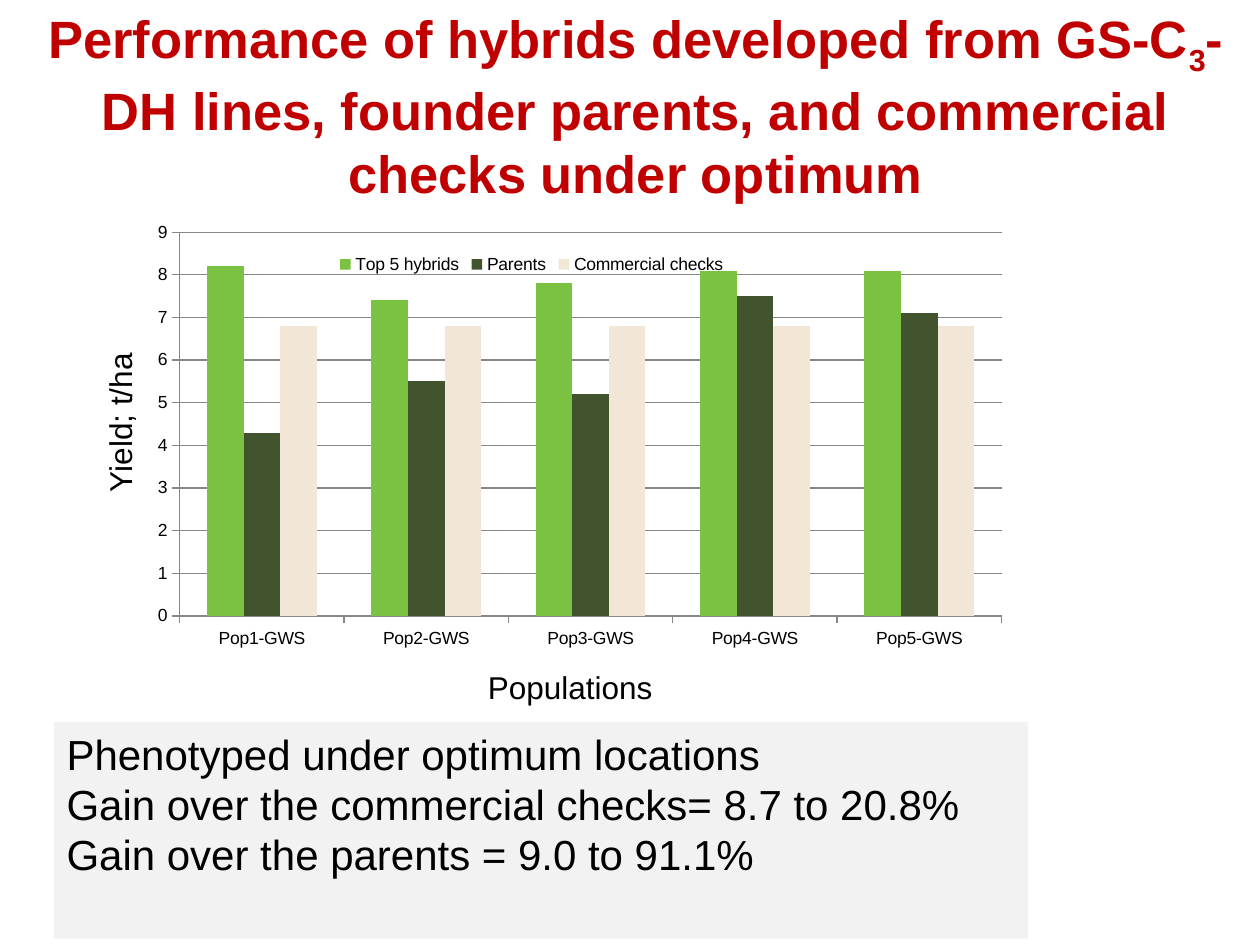
from lxml import etree
from pptx import Presentation
from pptx.chart.data import CategoryChartData
from pptx.dml.color import RGBColor
from pptx.enum.chart import XL_CHART_TYPE as ChartType, XL_LEGEND_POSITION as LegendPosition
from pptx.enum.chart import XL_TICK_MARK as TickMark
from pptx.enum.shapes import MSO_SHAPE as Shape
from pptx.enum.text import MSO_ANCHOR as Anchor, MSO_AUTO_SIZE as AutoSize, PP_ALIGN as Align
from pptx.oxml.ns import qn
from pptx.util import Inches, Pt

# Content
FONT = "Arial"
COLORS = {"title": "C00000", "text": "000000", "panel": "F2F2F2", "grid": "878787"}
TITLE = [
    ("Performance of hybrids developed from GS-C", False),
    ("3", True),
    ("-DH lines, founder parents, and commercial checks under optimum", False),
]
POPULATIONS = [f"Pop{number}-GWS" for number in range(1, 6)]
SERIES = [
    ("Top 5 hybrids", "7BC142", (8.2, 7.4, 7.8, 8.1, 8.1)),
    ("Parents", "41542E", (4.3, 5.5, 5.2, 7.5, 7.1)),
    ("Commercial checks", "F2E6D7", (6.8,) * 5),
]
FINDINGS = [
    "Phenotyped under optimum locations",
    "Gain over the commercial checks= 8.7 to 20.8%",
    "Gain over the parents = 9.0 to 91.1%",
]
# text, (left, top, width, height), rotated
AXIS_TITLES = [
    ("Yield; t/ha", (0.75, 1.78, 0.5, 3.15), True),
    ("Populations", (1.77, 5.25, 5.51, 0.4), False),
]
CHART_AREA = (1.14, 1.69, 7.16, 3.55)
PLOT_LAYOUT = (0.04, 0.043, 0.911, 0.858)
LEGEND_LAYOUT = (0.21, 0.08, 0.44, 0.07)


def rgb(name):
    return RGBColor.from_string(COLORS[name])


def inches(area):
    return [Inches(length) for length in area]


def style(font, size, color="text", bold=False):
    font.name, font.size, font.bold = FONT, Pt(size), bold
    font.color.rgb = rgb(color)


def manual_layout(parent, area, before, inner=False):
    """Place a chart part by fractions of the chart area."""
    for old in parent.findall(qn("c:layout")):
        parent.remove(old)
    layout = etree.Element(qn("c:layout"))
    manual = etree.SubElement(layout, qn("c:manualLayout"))
    settings = [("layoutTarget", "inner")] if inner else []
    settings += [("xMode", "edge"), ("yMode", "edge")]
    settings += zip("xywh", map(str, area))
    for tag, value in settings:
        etree.SubElement(manual, qn(f"c:{tag}")).set("val", value)
    parent.find(qn(before)).addprevious(layout)


deck = Presentation()
deck.slide_width, deck.slide_height = Inches(10), Inches(7.5)
slide = deck.slides.add_slide(deck.slide_layouts[5])

# Title with subscript
title = slide.shapes.title
title.left, title.top, title.width, title.height = inches((0.2, 0.21, 9.69, 1.25))
title.text_frame.auto_size = AutoSize.NONE
title.text_frame.vertical_anchor = Anchor.MIDDLE
para = title.text_frame.paragraphs[0]
para.alignment = Align.CENTER
for text, subscript in TITLE:
    span = para.add_run()
    span.text = text
    if subscript:
        span.font._element.set("baseline", "-25000")
style(para.font, 30, "title", bold=True)

# Axis titles
for text, area, rotated in AXIS_TITLES:
    box = slide.shapes.add_textbox(*inches(area))
    frame = box.text_frame
    frame.word_wrap = True
    if rotated:
        frame._txBody.bodyPr.set("vert", "vert270")
    para = frame.paragraphs[0]
    para.text, para.alignment = text, Align.CENTER
    style(para.font, 18)

# Yield chart
data = CategoryChartData()
data.categories = POPULATIONS
for name, _, values in SERIES:
    data.add_series(name, values)
chart = slide.shapes.add_chart(ChartType.COLUMN_CLUSTERED, *inches(CHART_AREA), data).chart
chart.has_title = False
style(chart.font, 10)
plot = chart.plots[0]
plot.gap_width, plot.overlap, plot.vary_by_categories = 150, 0, False
for series, (_, color, _) in zip(plot.series, SERIES):
    series.format.fill.solid()
    series.format.fill.fore_color.rgb = RGBColor.from_string(color)

value_axis, category_axis = chart.value_axis, chart.category_axis
value_axis.minimum_scale, value_axis.maximum_scale, value_axis.major_unit = 0, 9, 1
value_axis.has_major_gridlines = True
for axis in (value_axis, category_axis):
    axis.major_tick_mark = TickMark.OUTSIDE
for part in (value_axis, category_axis, value_axis.major_gridlines):
    part.format.line.color.rgb = rgb("grid")
    part.format.line.width = Pt(0.75)

chart.has_legend = True
legend = chart.legend
legend.position, legend.include_in_layout = LegendPosition.RIGHT, False
manual_layout(legend._element, LEGEND_LAYOUT, "c:overlay")
legend.include_in_layout = True
manual_layout(chart._chartSpace.chart.plotArea, PLOT_LAYOUT, "c:barChart", inner=True)

# Findings panel
panel = slide.shapes.add_shape(Shape.RECTANGLE, *inches((0.43, 5.73, 7.73, 1.72)))
panel.shadow.inherit = False
panel.fill.solid()
panel.fill.fore_color.rgb = rgb("panel")
panel.line.fill.background()
frame = panel.text_frame
frame.word_wrap = True
frame.vertical_anchor = Anchor.TOP
frame.text = "\n".join(FINDINGS)
for para in frame.paragraphs:
    para.alignment = Align.LEFT
    style(para.font, 24)

deck.save("out.pptx")
